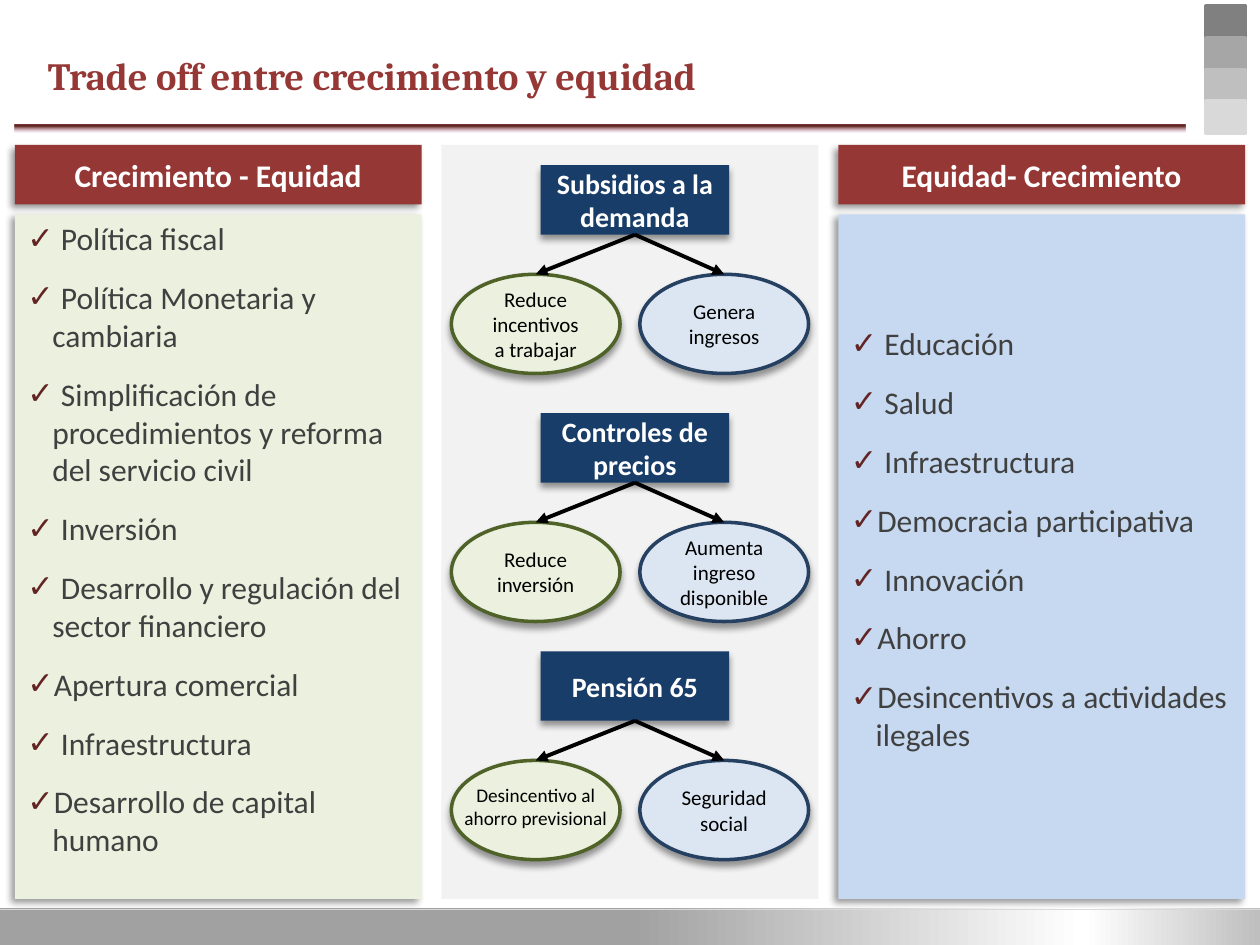
from dataclasses import dataclass

from lxml.etree import SubElement
from pptx import Presentation
from pptx.dml.color import RGBColor
from pptx.enum.shapes import MSO_CONNECTOR as Connector, MSO_SHAPE as Preset
from pptx.enum.text import MSO_ANCHOR as Anchor, MSO_AUTO_SIZE as AutoSize, PP_ALIGN as Align
from pptx.oxml.ns import qn
from pptx.util import Cm, Pt


@dataclass(frozen=True)
class Theme:
    heading_font: str = "Cambria"
    body_font: str = "Calibri"
    red: str = "953735"
    dark_red: str = "632523"
    navy: str = "193D69"
    pale_green: str = "EBF1DE"
    green_edge: str = "4F6228"
    pale_blue: str = "DCE6F2"
    blue_edge: str = "254061"
    list_blue: str = "C6D9F1"
    panel: str = "F2F2F2"
    list_text: str = "404040"
    rule: str = "D9D9D9"
    black: str = "000000"
    white: str = "FFFFFF"
    greys: tuple = ("808080", "A6A6A6", "BFBFBF", "D9D9D9")
    title_size: float = 22
    list_size: float = 18
    policy_size: float = 16
    effect_size: float = 12
    small_size: float = 11


@dataclass(frozen=True)
class Box:
    """Position and size in centimetres."""
    x: float
    y: float
    w: float
    h: float

    def emu(self) -> tuple:
        return Cm(self.x), Cm(self.y), Cm(self.w), Cm(self.h)


@dataclass(frozen=True)
class Column:
    x: float
    heading: str
    fill: str
    items: tuple


@dataclass(frozen=True)
class Policy:
    y: float
    name: str
    cost: str
    benefit: str
    wide_cost: bool = False  # long label set across the whole ellipse


THEME = Theme()
COLUMN_W, TOP, BOTTOM = 8.2, 2.92, 18.12
COLUMNS = (
    Column(0.3, "Crecimiento - Equidad", THEME.pale_green, (
        " Política fiscal", " Política Monetaria y cambiaria",
        " Simplificación de procedimientos y reforma del servicio civil",
        " Inversión", " Desarrollo y regulación del sector financiero",
        "Apertura comercial", " Infraestructura", "Desarrollo de capital humano")),
    Column(16.9, "Equidad- Crecimiento", THEME.list_blue, (
        " Educación", " Salud", " Infraestructura", "Democracia participativa",
        " Innovación", "Ahorro", "Desincentivos a actividades ilegales")),
)
POLICIES = (
    Policy(3.33, "Subsidios a la demanda", "Reduce incentivos a trabajar", "Genera ingresos"),
    Policy(8.33, "Controles de precios", "Reduce inversión", "Aumenta ingreso disponible"),
    Policy(13.13, "Pensión 65", "Desincentivo al ahorro previsional", "Seguridad social", True),
)


def rgb(color: str) -> RGBColor:
    return RGBColor.from_string(color)


def paint(shape, fill: str, edge: str = "", shadow_angle: int | None = None) -> None:
    """Solid fill, optional 2 pt edge and optional soft shadow."""
    shape.fill.solid()
    shape.fill.fore_color.rgb = rgb(fill)
    if edge:
        shape.line.color.rgb = rgb(edge)
        shape.line.width = Pt(2)
    else:
        shape.line.fill.background()
    shape.shadow.inherit = False
    if shadow_angle is not None:
        effects = shape.element.spPr.find(qn("a:effectLst"))
        shadow = SubElement(effects, qn("a:outerShdw"), blurRad=str(Pt(4)), dist=str(Pt(3)),
                            dir=str(shadow_angle * 60000), algn="ctr", rotWithShape="0")
        tint = SubElement(shadow, qn("a:srgbClr"), val=THEME.black)
        SubElement(tint, qn("a:alpha"), val="40000")


def paint_gradient(shape, stops: tuple, angle: int) -> None:
    """Stops are (position %, colour, opacity %)."""
    shape.fill.gradient()
    shape.fill.gradient_angle = angle
    stop_list = shape.element.spPr.find(qn("a:gradFill")).find(qn("a:gsLst"))
    for old in list(stop_list):
        stop_list.remove(old)
    for position, color, opacity in stops:
        stop = SubElement(stop_list, qn("a:gs"), pos=str(position * 1000))
        tint = SubElement(stop, qn("a:srgbClr"), val=color)
        SubElement(tint, qn("a:alpha"), val=str(opacity * 1000))
    shape.line.fill.background()
    shape.shadow.inherit = False


def style(paragraph, size: float, color: str, bold: bool = False,
          font: str = THEME.body_font) -> None:
    for run in paragraph.runs:
        run.font.size, run.font.name, run.font.bold = Pt(size), font, bold
        run.font.color.rgb = rgb(color)


def write(shape, label: str, size: float, color: str, bold: bool = False) -> None:
    frame = shape.text_frame
    frame.word_wrap = True
    frame.text = label
    frame.paragraphs[0].alignment = Align.CENTER
    style(frame.paragraphs[0], size, color, bold)


def add_block(slide, preset, box: Box, fill: str, edge: str = "", shadow_angle=None):
    shape = slide.shapes.add_shape(preset, *box.emu())
    paint(shape, fill, edge, shadow_angle)
    return shape


def add_line(slide, start: tuple, end: tuple, color: str, width: float, arrow: bool = False) -> None:
    line = slide.shapes.add_connector(Connector.STRAIGHT, *(Cm(v) for v in start + end))
    line.line.color.rgb = rgb(color)
    line.line.width = Pt(width)
    properties = line.element.spPr
    if arrow:
        SubElement(properties.find(qn("a:ln")), qn("a:tailEnd"), type="triangle")
    SubElement(properties, qn("a:effectLst"))


def place(placeholder, box: Box) -> None:
    placeholder.left, placeholder.top, placeholder.width, placeholder.height = box.emu()
    placeholder.text_frame.auto_size = AutoSize.NONE


def add_frame(slide) -> None:
    """Footer band, grey squares and the rule below the title."""
    footer = slide.shapes.add_shape(Preset.RECTANGLE, *Box(0, 18.31, 25.4, 0.74).emu())
    paint_gradient(footer, ((50, "A1A1A1", 100), (86, "FFFFFF", 100), (100, "BFBFBF", 100)), 0)
    add_line(slide, (0, 18.33), (25.4, 18.33), THEME.rule, 0.75)
    for row, grey in enumerate(THEME.greys):
        add_block(slide, Preset.RECTANGLE, Box(24.31, 0.12 + 0.64 * row, 0.8, 0.64), grey, grey)
    rule = slide.shapes.add_shape(Preset.RECTANGLE, *Box(0.3, 2.51, 23.6, 0.16).emu())
    paint_gradient(rule, ((23, THEME.dark_red, 100), (97, "FFEBFA", 43), (100, "85C2FF", 100)), 270)


def add_column(slide, body, column: Column) -> None:
    header = add_block(slide, Preset.RECTANGLE, Box(column.x, TOP, COLUMN_W, 1.2), THEME.red,
                       shadow_angle=135)
    write(header, column.heading, THEME.list_size, THEME.white, True)
    list_top = TOP + 1.4
    place(body, Box(column.x, list_top, COLUMN_W, BOTTOM - list_top))
    paint(body, column.fill, shadow_angle=135)
    frame = body.text_frame
    frame.vertical_anchor = Anchor.MIDDLE
    frame.margin_bottom = Cm(0.85)
    for index, item in enumerate(column.items):
        paragraph = frame.add_paragraph() if index else frame.paragraphs[0]
        paragraph.text = item
        layout = paragraph._p.get_or_add_pPr()
        layout.set("marL", str(Cm(0.5)))
        layout.set("indent", str(-Cm(0.5)))
        bullet_color = SubElement(layout, qn("a:buClr"))
        SubElement(bullet_color, qn("a:srgbClr"), val=THEME.dark_red)
        SubElement(layout, qn("a:buChar"), char="✓")
        paragraph.space_before = Pt(6 if index else 0)
        paragraph.space_after = Pt(6)
        style(paragraph, THEME.list_size, THEME.list_text)


def add_policy(slide, policy: Policy) -> None:
    """Policy box with arrows to its cost (left) and its benefit (right)."""
    name = add_block(slide, Preset.RECTANGLE, Box(10.9, policy.y, 3.8, 1.4), THEME.navy,
                     shadow_angle=90)
    write(name, policy.name, THEME.policy_size, THEME.white, True)
    effect_y = policy.y + 2.2
    for x, label, fill, edge, wide in (
            (9.1, policy.cost, THEME.pale_green, THEME.green_edge, policy.wide_cost),
            (12.9, policy.benefit, THEME.pale_blue, THEME.blue_edge, False)):
        effect = add_block(slide, Preset.OVAL, Box(x, effect_y, 3.4, 2), fill, edge, 90)
        if wide:
            effect = slide.shapes.add_textbox(*Box(x, effect_y + 0.33, 3.4, 1.67).emu())
        write(effect, label, THEME.small_size if wide else THEME.effect_size, THEME.black)
        add_line(slide, (12.8, policy.y + 1.4), (x + 1.7, effect_y), THEME.black, 2.25, True)


def main() -> None:
    deck = Presentation()
    deck.slide_width, deck.slide_height = Cm(25.4), Cm(19.05)
    slide = deck.slides.add_slide(deck.slide_layouts[3])
    title, *bodies = slide.placeholders
    add_frame(slide)

    # Title
    place(title, Box(0.71, 0.92, 18.6, 1.6))
    title.text_frame.text = "Trade off entre crecimiento y equidad"
    title.text_frame.vertical_anchor = Anchor.TOP
    title.text_frame.paragraphs[0].alignment = Align.LEFT
    style(title.text_frame.paragraphs[0], THEME.title_size, THEME.red, True, THEME.heading_font)

    # Side lists and central panel
    for body, column in zip(bodies, COLUMNS):
        add_column(slide, body, column)
    add_block(slide, Preset.RECTANGLE, Box(8.9, TOP, 7.6, BOTTOM - TOP), THEME.panel)
    for policy in POLICIES:
        add_policy(slide, policy)
    deck.save("out.pptx")


if __name__ == "__main__":
    main()
